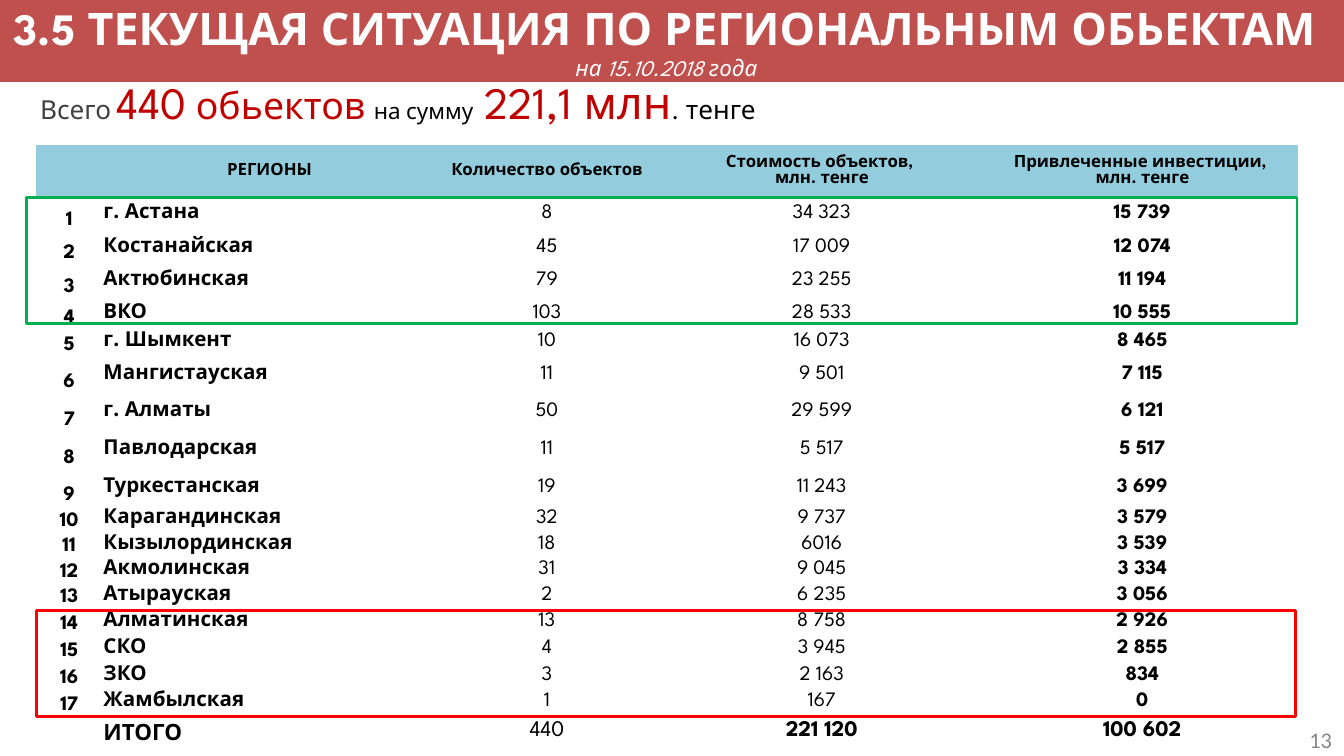
from dataclasses import dataclass

from lxml import etree
from pptx import Presentation
from pptx.dml.color import RGBColor
from pptx.enum.shapes import MSO_SHAPE
from pptx.enum.text import MSO_ANCHOR, MSO_AUTO_SIZE, PP_ALIGN
from pptx.oxml.ns import qn
from pptx.util import Inches, Pt

RECTANGLE = MSO_SHAPE.RECTANGLE
TOP, MIDDLE, BOTTOM = MSO_ANCHOR.TOP, MSO_ANCHOR.MIDDLE, MSO_ANCHOR.BOTTOM
LEFT, CENTER, RIGHT = PP_ALIGN.LEFT, PP_ALIGN.CENTER, PP_ALIGN.RIGHT
FIT_SHAPE, NO_FIT = MSO_AUTO_SIZE.SHAPE_TO_FIT_TEXT, MSO_AUTO_SIZE.NONE

COLORS = {
    "banner": "C0504D",
    "header": "93CDDD",
    "white": "FFFFFF",
    "black": "000000",
    "gray": "404040",
    "page": "898989",
    "accent": "C00000",
    "leaders": "00B050",
    "laggards": "FF0000",
}
FONT = "League Spartan"
PLAIN_TABLE_STYLE = "{2D5ABB26-0587-4C30-8999-92F81FD0307C}"


@dataclass
class Span:
    text: str
    size: float
    color: str = "black"
    bold: bool = False
    italic: bool = False
    font: str = FONT


@dataclass
class Box:
    left: float
    top: float
    width: float
    height: float

    def lengths(self) -> tuple:
        return tuple(Inches(v) for v in (self.left, self.top, self.width, self.height))


@dataclass
class Region:
    name: str
    objects: str
    cost: str
    investment: str


HEADERS = [
    [],
    ["РЕГИОНЫ"],
    ["Количество объектов"],
    ["Стоимость объектов, ", "млн. тенге"],
    ["Привлеченные инвестиции, ", "млн. тенге"],
]
REGIONS = [
    Region("г. Астана", "8", "34 323", "15 739"),
    Region("Костанайская", "45", "17 009", "12 074"),
    Region("Актюбинская", "79", "23 255", "11 194"),
    Region("ВКО", "103", "28 533", "10 555"),
    Region("г. Шымкент", "10", "16 073", "8 465"),
    Region("Мангистауская", "11", "9 501", "7 115"),
    Region("г. Алматы", "50", "29 599", "6 121"),
    Region("Павлодарская", "11", "5 517", "5 517"),
    Region("Туркестанская", "19", "11 243", "3 699"),
    Region("Карагандинская", "32", "9 737", "3 579"),
    Region("Кызылординская", "18", "6016", "3 539"),
    Region("Акмолинская", "31", "9 045", "3 334"),
    Region("Атырауская", "2", "6 235", "3 056"),
    Region("Алматинская", "13", "8 758", "2 926"),
    Region("СКО", "4", "3 945", "2 855"),
    Region("ЗКО", "3", "2 163", "834"),
    Region("Жамбылская", "1", "167", "0"),
]
TOTAL = Region("ИТОГО", "440", "221 120", "100 602")
COLUMN_WIDTHS = [0.49, 2.49, 1.64, 2.45, 2.32]
ROW_HEIGHTS = [0.38] + [0.25] * 3 + [0.23, 0.2] + [0.28] * 4 + [0.19] * 4 + [0.2] * 4 + [0.23]


def rgb(name: str) -> RGBColor:
    return RGBColor.from_string(COLORS[name])


def write(text_frame, lines: list[list[Span]], alignment=LEFT) -> None:
    for index, spans in enumerate(lines):
        paragraph = text_frame.add_paragraph() if index else text_frame.paragraphs[0]
        paragraph.alignment = alignment
        for span in spans:
            run = paragraph.add_run()
            run.text = span.text
            run.font.name = span.font
            run.font.size = Pt(span.size)
            run.font.bold = span.bold
            run.font.italic = span.italic
            run.font.color.rgb = rgb(span.color)


def add_text(slide, box: Box, spans: list[Span], alignment=LEFT, anchor=TOP, fit=NO_FIT) -> None:
    text_frame = slide.shapes.add_textbox(*box.lengths()).text_frame
    text_frame.word_wrap = True
    text_frame.auto_size = fit
    text_frame.vertical_anchor = anchor
    write(text_frame, [spans], alignment)


def add_frame(slide, box: Box, color: str) -> None:
    shape = slide.shapes.add_shape(RECTANGLE, *box.lengths())
    shape.shadow.inherit = False
    shape.fill.background()
    shape.line.color.rgb = rgb(color)
    shape.line.width = Pt(1.5)


def add_banner(slide, box: Box, lines: list[list[Span]]) -> None:
    shape = slide.shapes.add_shape(RECTANGLE, *box.lengths())
    shape.shadow.inherit = False
    shape.fill.solid()
    shape.fill.fore_color.rgb = rgb("banner")
    shape.line.fill.background()
    shape.text_frame.word_wrap = True
    shape.text_frame.vertical_anchor = MIDDLE
    write(shape.text_frame, lines, CENTER)


def fill_cell(cell, lines: list[Span], alignment=CENTER, anchor=MIDDLE, fill: str = "") -> None:
    cell.margin_left = cell.margin_top = cell.margin_right = Inches(0.01)
    cell.margin_bottom = 0
    cell.vertical_anchor = anchor
    if fill:
        cell.fill.solid()
        cell.fill.fore_color.rgb = rgb(fill)
    else:
        cell.fill.background()
    if lines:
        write(cell.text_frame, [[span] for span in lines], alignment)
    else:
        paragraph = cell.text_frame.paragraphs[0]
        etree.SubElement(paragraph._p, qn("a:endParaRPr"), sz="900")


def add_region_row(table, row: int, region: Region, number: str, size: float) -> None:
    total = not number
    fill_cell(table.cell(row, 0), [Span(number, size, bold=True)] if number else [], anchor=BOTTOM)
    fill_cell(table.cell(row, 1), [Span(region.name, size, bold=True)], LEFT, BOTTOM if total else MIDDLE)
    fill_cell(table.cell(row, 2), [Span(region.objects, size)])
    fill_cell(table.cell(row, 3), [Span(region.cost, size, bold=total)])
    fill_cell(table.cell(row, 4), [Span(region.investment, size, bold=True)])


def add_region_table(slide, box: Box) -> None:
    table = slide.shapes.add_table(len(ROW_HEIGHTS), len(COLUMN_WIDTHS), *box.lengths()).table
    table.first_row = table.horz_banding = False
    table._tbl.tblPr.find(qn("a:tableStyleId")).text = PLAIN_TABLE_STYLE
    for column, width in zip(table.columns, COLUMN_WIDTHS):
        column.width = Inches(width)
    for row, height in zip(table.rows, ROW_HEIGHTS):
        row.height = Inches(height)
    for column, lines in enumerate(HEADERS):
        fill_cell(table.cell(0, column), [Span(line, 9, bold=True) for line in lines], fill="header")
    for row, region in enumerate(REGIONS, start=1):
        add_region_row(table, row, region, str(row), 11)
    add_region_row(table, len(REGIONS) + 1, TOTAL, "", 12)


def main() -> None:
    presentation = Presentation()
    presentation.slide_width = Inches(10)
    presentation.slide_height = Inches(10 * 9 / 16)
    slide = presentation.slides.add_slide(presentation.slide_layouts[6])
    add_region_table(slide, Box(0.27, 1.08, 9.39, 4.5))
    add_text(slide, Box(0.2, 0.51, 9.84, 0.51), [
        Span("Всего", 14, "gray"),
        Span(" ", 12, "gray"),
        Span("440", 24, "accent"),
        Span(" обьектов", 20, "accent"),
        Span(" ", 18, "accent"),
        Span("на сумму  ", 12),
        Span("221,1 млн", 24, "accent"),
        Span(". тенге", 14),
    ], fit=FIT_SHAPE)
    add_frame(slide, Box(0.2, 1.47, 9.45, 0.94), "leaders")
    add_frame(slide, Box(0.27, 4.54, 9.37, 0.79), "laggards")
    add_text(slide, Box(7.68, 5.35, 2.33, 0.3), [Span("13", 12, "page", font="Calibri")], RIGHT, MIDDLE)
    add_banner(slide, Box(-0.04, 0, 10.04, 0.61), [
        [Span("3.5 ТЕКУЩАЯ СИТУАЦИЯ ПО РЕГИОНАЛЬНЫМ ОБЬЕКТАМ", 24, "white", bold=True), Span(" ", 18, "white", bold=True)],
        [Span("на 15.10.2018 года ", 12, "white", italic=True)],
    ])
    presentation.save("out.pptx")


if __name__ == "__main__":
    main()
